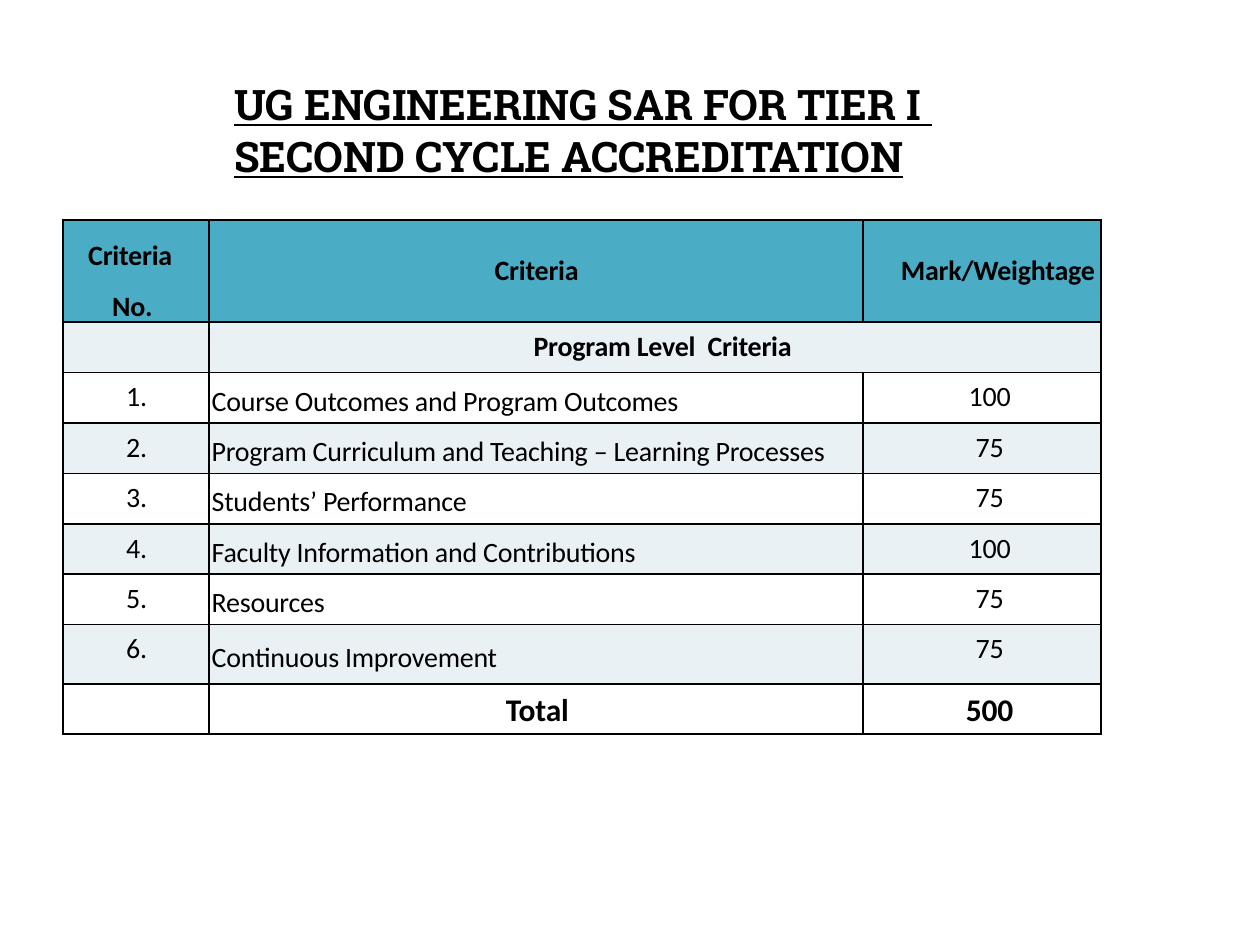
from lxml.etree import SubElement
from pptx import Presentation
from pptx.dml.color import RGBColor
from pptx.enum.text import MSO_ANCHOR as Anchor, PP_ALIGN as Align
from pptx.oxml.ns import qn
from pptx.util import Inches, Pt

BLACK = RGBColor(0x00, 0x00, 0x00)
WHITE = RGBColor(0xFF, 0xFF, 0xFF)
TEAL = RGBColor(0x4B, 0xAC, 0xC6)
PALE = RGBColor(0xE9, 0xF1, 0xF5)

WIDTH, HEIGHT = Inches(10), Inches(7.5)
COLUMN_WIDTHS = [1.16, 5.19, 1.89]
ROW_HEIGHTS = [0.62] + [0.4] * 6 + [0.47, 0.4]
BODY_INDENTS = [0.01, 0.02, 0.12]

TITLE = ["UG ENGINEERING SAR FOR TIER I ", "SECOND CYCLE ACCREDITATION"]
HEADINGS = ["Criteria  No.", "Criteria", "Mark/Weightage"]
CRITERIA = [
    ("Course Outcomes and Program Outcomes", 100),
    ("Program Curriculum and Teaching – Learning Processes", 75),
    ("Students’ Performance", 75),
    ("Faculty Information and Contributions", 100),
    ("Resources", 75),
    ("Continuous Improvement", 75),
]


class SlideBuilder:
    title_font = "Roboto Slab"
    table_font = "Calibri"

    def __init__(self, presentation):
        self.slide = presentation.slides.add_slide(presentation.slide_layouts[6])

    def place(self, left, top, width, height):
        """Turn shares of the slide into lengths."""
        return (int(left * WIDTH), int(top * HEIGHT),
                int(width * WIDTH), int(height * HEIGHT))

    def format_paragraph(self, paragraph, font_name, size, bold=False, underline=False,
                         align=Align.LEFT, margin=0.01, indent=0, before=0, tracking=0):
        paragraph.alignment = align
        paragraph.space_before = Pt(before)
        properties = paragraph._p.get_or_add_pPr()
        properties.set("marL", str(Inches(margin)))
        properties.set("indent", str(Inches(indent)))
        for run in paragraph.runs:
            font = run.font
            font.name, font.size = font_name, Pt(size)
            font.bold, font.underline = bold, underline
            font.color.rgb = BLACK
            font._element.set("spc", str(tracking))

    def title(self, lines, *box):
        frame = self.slide.shapes.add_textbox(*self.place(*box)).text_frame
        frame.word_wrap = True
        frame.text = "\n".join(lines)
        for paragraph in frame.paragraphs:
            self.format_paragraph(paragraph, self.title_font, 24, bold=True,
                                  underline=True, before=0.9)

    def table(self, *box):
        table = self.slide.shapes.add_table(
            len(ROW_HEIGHTS), len(COLUMN_WIDTHS), *self.place(*box)).table
        for column, width in zip(table.columns, COLUMN_WIDTHS):
            column.width = Inches(width)
        for row, height in zip(table.rows, ROW_HEIGHTS):
            row.height = Inches(height)
        return table

    def cell(self, cell, text, fill, size=16, bold=False, anchor=Anchor.TOP,
             top=0.06, line_spacing=None, **layout):
        cell.margin_left = cell.margin_right = cell.margin_bottom = 0
        cell.margin_top = Inches(top)
        cell.vertical_anchor = anchor
        cell.fill.solid()
        cell.fill.fore_color.rgb = fill
        self.borders(cell)
        cell.text_frame.text = text
        paragraph = cell.text_frame.paragraphs[0]
        if line_spacing:
            paragraph.line_spacing = line_spacing
        self.format_paragraph(paragraph, self.table_font, size, bold,
                              tracking=-10, **layout)

    def borders(self, cell):
        properties = cell._tc.get_or_add_tcPr()
        for position, side in enumerate(("lnL", "lnR", "lnT", "lnB")):
            line = SubElement(properties, qn(f"a:{side}"), w=str(Pt(1)))
            fill = SubElement(line, qn("a:solidFill"))
            SubElement(fill, qn("a:srgbClr"), val=str(BLACK))
            properties.insert(position, line)


def main():
    presentation = Presentation()
    presentation.slide_width, presentation.slide_height = WIDTH, HEIGHT
    builder = SlideBuilder(presentation)

    # Title
    builder.title(TITLE, 0.175, 0.077, 0.683, 0.123)

    # Heading row
    table = builder.table(0.05, 0.233, 0.824, 0.52)
    heading_layouts = [
        dict(margin=0.39, indent=-0.19, line_spacing=1.5, top=0.01),
        dict(align=Align.CENTER, top=0),
        dict(margin=0.3, top=0),
    ]
    for column, (text, layout) in enumerate(zip(HEADINGS, heading_layouts)):
        builder.cell(table.cell(0, column), text, TEAL, bold=True,
                     anchor=Anchor.MIDDLE, **layout)

    # Section, criteria and total rows
    rows = [("", "Program Level  Criteria", "")]
    rows += [(f"{number}.", name, str(mark))
             for number, (name, mark) in enumerate(CRITERIA, 1)]
    rows.append(("", "Total", str(sum(mark for _, mark in CRITERIA))))
    last = len(rows)
    for row, texts in enumerate(rows, 1):
        summary = row in (1, last)
        for column, text in enumerate(texts):
            is_name = column == 1 and not summary
            margin = 0.12 if row == 1 else BODY_INDENTS[column]
            builder.cell(table.cell(row, column), text, PALE if row % 2 else WHITE,
                         size=18 if row == last else 16, bold=summary,
                         anchor=Anchor.MIDDLE if is_name else Anchor.TOP,
                         align=Align.LEFT if is_name else Align.CENTER,
                         margin=margin, before=5.1)
    table.cell(1, 1).merge(table.cell(1, 2))

    presentation.save("out.pptx")


if __name__ == "__main__":
    main()
